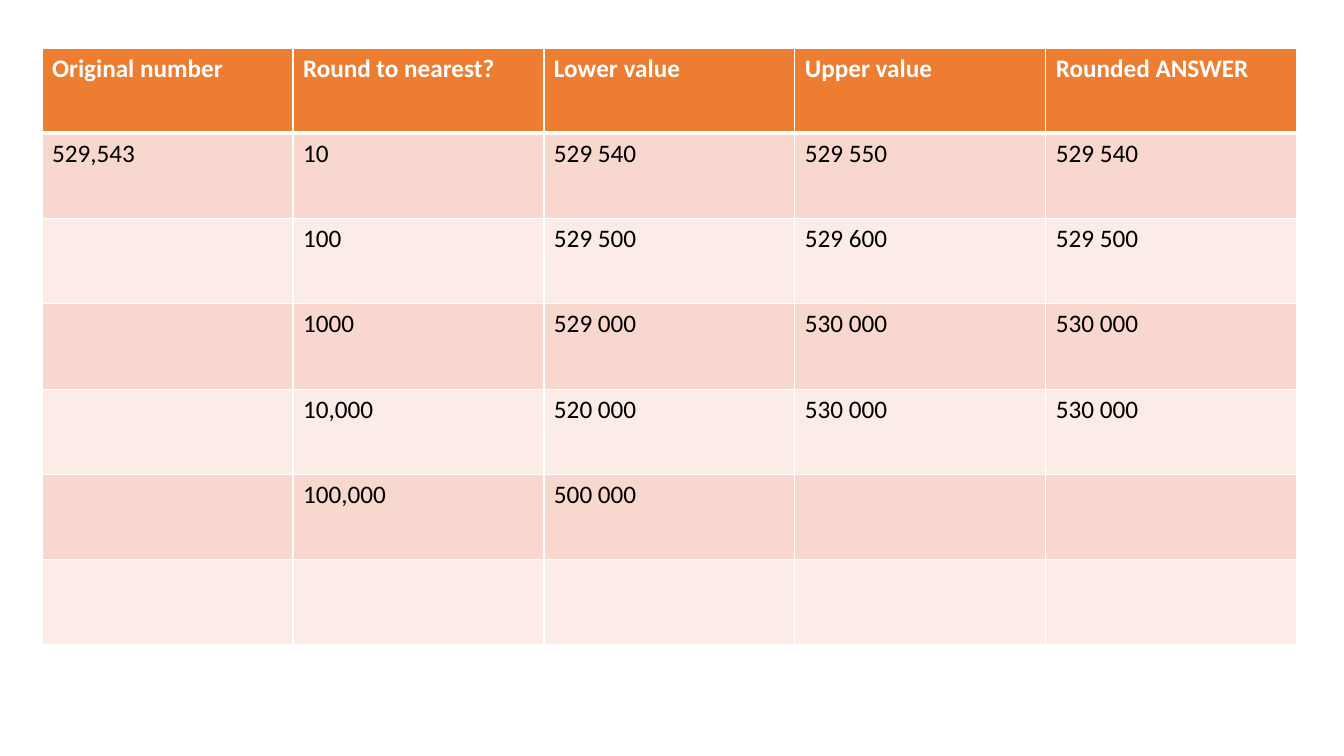
"""Build a slide with a table of rounding steps for one number."""
from lxml.etree import SubElement as Sub
from pptx import Presentation as Deck
from pptx.dml.color import RGBColor as Rgb
from pptx.oxml.ns import qn
from pptx.util import Emu, Pt

WHITE = Rgb(0xFF, 0xFF, 0xFF)
BLACK = Rgb(0x00, 0x00, 0x00)
ORANGE = Rgb(0xED, 0x7D, 0x31)
PEACH = Rgb(0xF8, 0xD7, 0xCE)
BLUSH = Rgb(0xFC, 0xEC, 0xE8)

SCALE = 914400 / 100.8

ROWS = [
    ["Original number", "Round to nearest?", "Lower value", "Upper value", "Rounded ANSWER"],
    ["529,543", "10", "529 540", "529 550", "529 540"],
    ["", "100", "529 500", "529 600", "529 500"],
    ["", "1000", "529 000", "530 000", "530 000"],
    ["", "10,000", "520 000", "530 000", "530 000"],
    ["", "100,000", "500 000", "", ""],
    ["", "", "", "", ""],
]


def px(num):
    return Emu(round(num * SCALE))


class Page:
    base = {"name": "Calibri", "size": Pt(18)}
    head = {**base, "bold": True}
    body = {**base, "bold": False}

    def __init__(self, deck):
        self.slide = deck.slides.add_slide(deck.slide_layouts[6])

    def edge(self, cell, sides):
        props = cell._tc.get_or_add_tcPr()
        for spot, (side, width) in enumerate(sides.items()):
            line = Sub(props, qn(f"a:ln{side}"), w=str(Pt(width)))
            fill = Sub(line, qn("a:solidFill"))
            Sub(fill, qn("a:srgbClr"), val=str(WHITE))
            props.insert(spot, line)

    def cell(self, cell, text, row):
        cell.fill.solid()
        cell.fill.fore_color.rgb = (BLUSH, PEACH)[row % 2] if row else ORANGE
        self.edge(cell, {"L": 1, "R": 1, "T": 3 if row == 1 else 1, "B": 1 if row else 3})
        cell.text = text
        font = cell.text_frame.paragraphs[0].font
        for key, val in (self.body if row else self.head).items():
            setattr(font, key, val)
        font.color.rgb = BLACK if row else WHITE

    def table(self, rows, left, top, width, height):
        box = map(px, (left, top, width, height))
        grid = self.slide.shapes.add_table(len(rows), len(rows[0]), *box).table
        for row, texts in enumerate(rows):
            for col, text in enumerate(texts):
                self.cell(grid.cell(row, col), text, row)


def main():
    deck = Deck()
    deck.slide_width, deck.slide_height = px(1344), px(756)
    Page(deck).table(ROWS, 42, 48, 1255, 597)
    deck.save("out.pptx")


if __name__ == "__main__":
    main()
